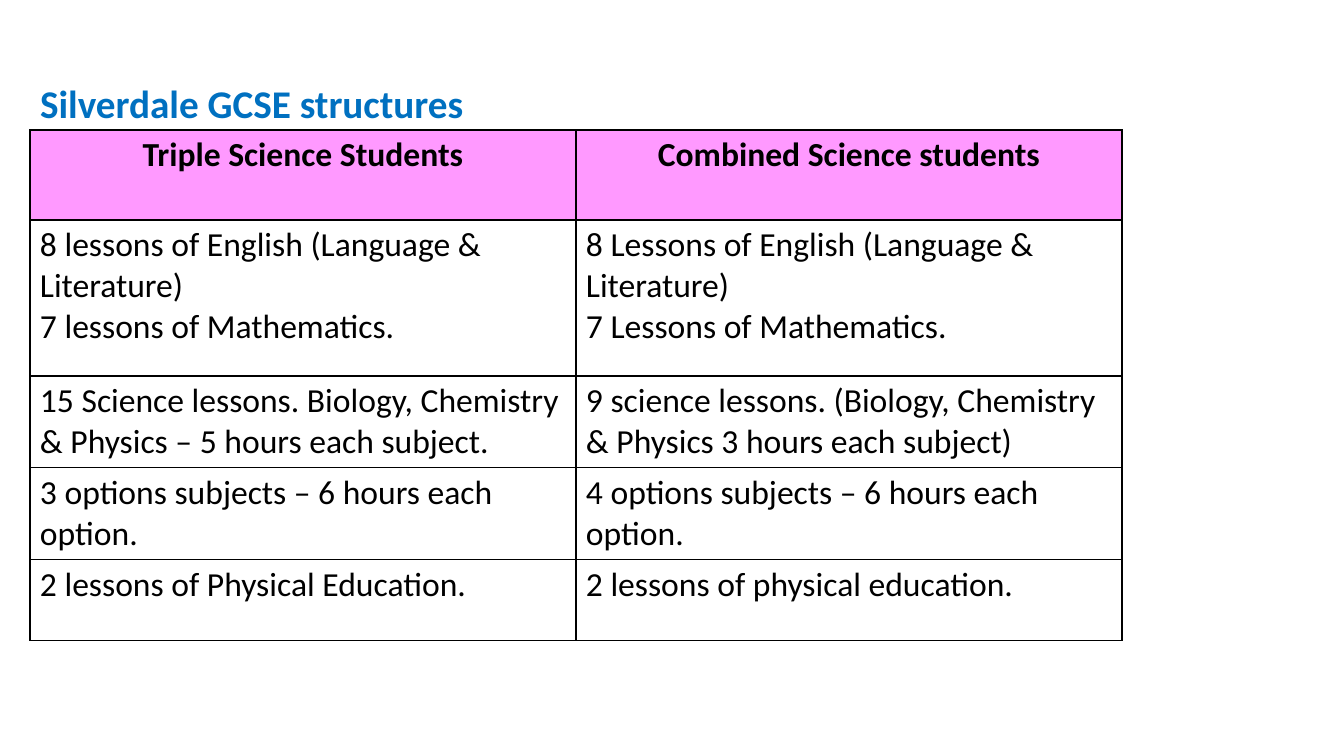
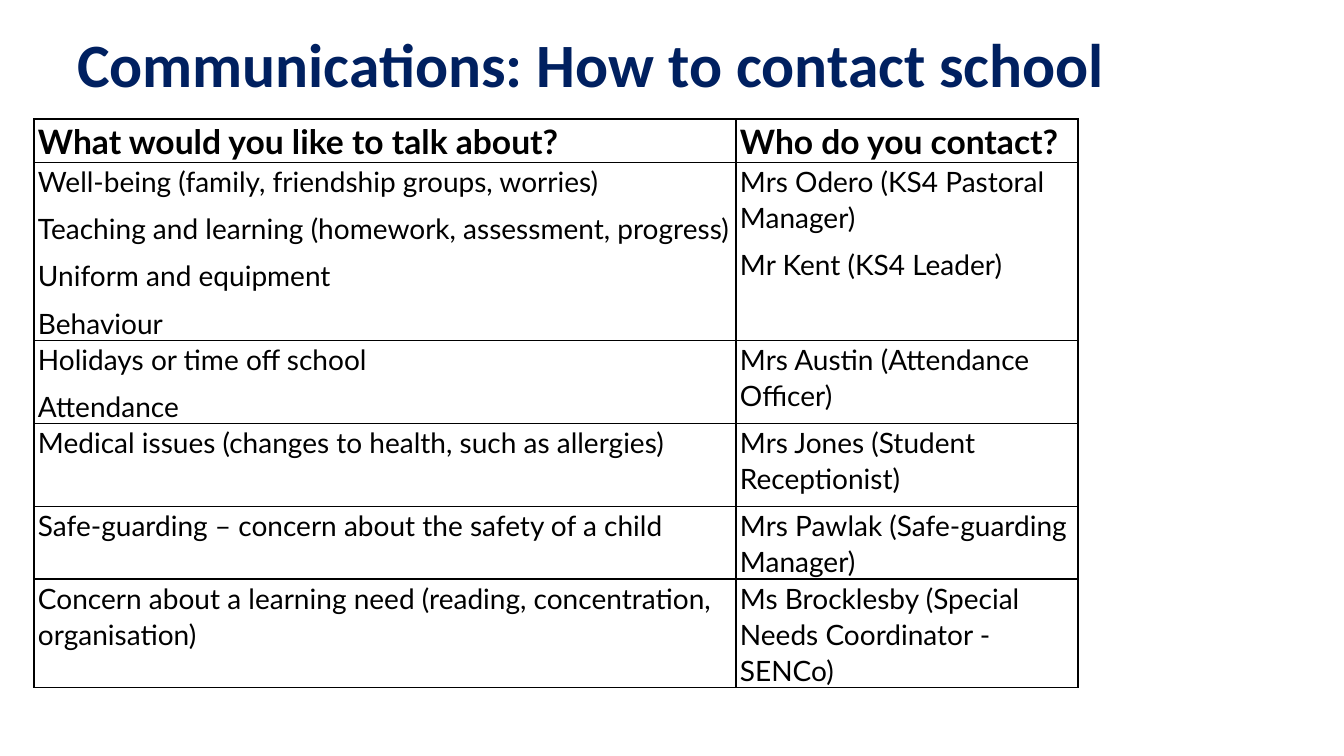
import dataclasses

import lxml.etree
import pptx
import pptx.dml.color
import pptx.enum.text
import pptx.oxml.ns
import pptx.util

ALIGN = pptx.enum.text.PP_ALIGN
ANCHOR = pptx.enum.text.MSO_ANCHOR
PX_PER_INCH = 100.8


@dataclasses.dataclass(frozen=True)
class Theme:
    black: str = "000000"
    white: str = "FFFFFF"
    blue: str = "0070C0"
    navy: str = "002060"
    pink: str = "FF99FF"
    title_font: str = "Calibri"
    contact_font: str = "Lato"
    main_title_size: int = 44
    table_title_size: int = 28
    large_size: int = 24
    body_size: int = 20
    border_points: int = 1


THEME = Theme()

LESSONS = [
    (["Triple Science Students"], ["Combined Science students"]),
    (["8 lessons of English (Language & Literature)", "7 lessons of Mathematics."],
     ["8 Lessons of English (Language & Literature)", "7 Lessons of Mathematics."]),
    (["15 Science lessons. Biology, Chemistry & Physics – 5 hours each subject."],
     ["9 science lessons. (Biology, Chemistry & Physics 3 hours each subject)"]),
    (["3 options subjects – 6 hours each option."],
     ["4 options subjects – 6 hours each option."]),
    (["2 lessons of Physical Education."], ["2 lessons of physical education."]),
]

CONTACTS = [
    (["What would you like to talk about?"], ["Who do you contact?"]),
    (["Well-being (family, friendship groups, worries)",
      "Teaching and learning (homework, assessment, progress)",
      "Uniform and equipment", "Behaviour"],
     ["Mrs Odero (KS4 Pastoral Manager)", "Mr Kent (KS4 Leader)"]),
    (["Holidays or time off school", "Attendance"],
     ["Mrs Austin (Attendance Officer)"]),
    (["Medical issues (changes to health, such as allergies)"],
     ["Mrs Jones (Student Receptionist)"]),
    (["Safe-guarding – concern about the safety of a child"],
     ["Mrs Pawlak (Safe-guarding Manager)"]),
    (["Concern about a learning need (reading, concentration, organisation)"],
     ["Ms Brocklesby (Special Needs Coordinator - SENCo)"]),
]


def px(count):
    return pptx.util.Inches(count / PX_PER_INCH)


def write(frame, lines, *, size, font=THEME.title_font, color=THEME.black, bold=False,
          align=ALIGN.LEFT, line_spacing=1.0, space_after=0):
    """Fill a text frame with one paragraph for each line."""
    for index, line in enumerate(lines):
        para = frame.paragraphs[0] if index == 0 else frame.add_paragraph()
        para.alignment = align
        para.line_spacing = line_spacing
        para.space_before = pptx.util.Pt(0)
        para.space_after = pptx.util.Pt(space_after)
        span = para.add_run()
        span.text = line
        span.font.size = pptx.util.Pt(size)
        span.font.name = font
        span.font.bold = bold
        span.font.color.rgb = pptx.dml.color.RGBColor.from_string(color)


def place_title(page, text, box, **style):
    title = page.shapes.title
    title.left, title.top, title.width, title.height = map(px, box)
    frame = title.text_frame
    frame.word_wrap = True
    frame.auto_size = pptx.enum.text.MSO_AUTO_SIZE.NONE
    frame.vertical_anchor = ANCHOR.TOP
    write(frame, [text], bold=True, **style)


def outline_cell(cell):
    properties = cell._tc.get_or_add_tcPr()
    qn = pptx.oxml.ns.qn
    for side in ("lnL", "lnR", "lnT", "lnB"):
        line = lxml.etree.SubElement(properties, qn(f"a:{side}"),
                                     w=str(pptx.util.Pt(THEME.border_points)))
        fill = lxml.etree.SubElement(line, qn("a:solidFill"))
        lxml.etree.SubElement(fill, qn("a:srgbClr"), val=THEME.black)


def place_table(page, rows, corner, widths, heights, *, head, body,
                head_fill=THEME.white, margins=(10, 5)):
    """Draw a bordered table; head and body hold the text formats."""
    left, top = corner
    table = page.shapes.add_table(
        len(rows), len(widths), px(left), px(top),
        px(sum(widths)), px(sum(heights))).table
    table.first_row = table.horz_banding = False
    for column, width in zip(table.columns, widths):
        column.width = px(width)
    for row_index, (row, height) in enumerate(zip(rows, heights)):
        table.rows[row_index].height = px(height)
        is_head = row_index == 0
        for column_index, lines in enumerate(row):
            cell = table.cell(row_index, column_index)
            outline_cell(cell)
            cell.fill.solid()
            cell.fill.fore_color.rgb = pptx.dml.color.RGBColor.from_string(
                head_fill if is_head else THEME.white)
            cell.margin_left = cell.margin_right = px(margins[0])
            cell.margin_top = cell.margin_bottom = px(margins[1])
            cell.vertical_anchor = ANCHOR.TOP
            write(cell.text_frame, lines, **(head if is_head else body))


def build_lessons(page):
    place_title(page, "Silverdale GCSE structures", (30, 74, 1087, 56),
                size=THEME.table_title_size, color=THEME.blue)
    body = {"size": THEME.large_size}
    place_table(page, LESSONS, (30, 130), (546, 546), (90, 156, 91, 91, 81),
                head={**body, "bold": True, "align": ALIGN.CENTER}, body=body,
                head_fill=THEME.pink)


def build_contacts(page):
    place_title(page, "Communications: How to contact school", (67, 21, 1233, 96),
                size=THEME.main_title_size, color=THEME.navy)
    body = {"size": THEME.body_size, "font": THEME.contact_font,
            "line_spacing": 1.07, "space_after": 8}
    place_table(page, CONTACTS, (34, 119), (702, 342), (43, 178, 83, 83, 72, 108),
                head={**body, "size": THEME.large_size, "bold": True}, body=body,
                margins=(4, 0))


def main():
    deck = pptx.Presentation()
    deck.slide_width, deck.slide_height = px(1344), px(756)
    title_only = deck.slide_layouts.get_by_name("Title Only")
    for build in (build_lessons, build_contacts):
        build(deck.slides.add_slide(title_only))
    deck.save("out.pptx")


if __name__ == "__main__":
    main()
